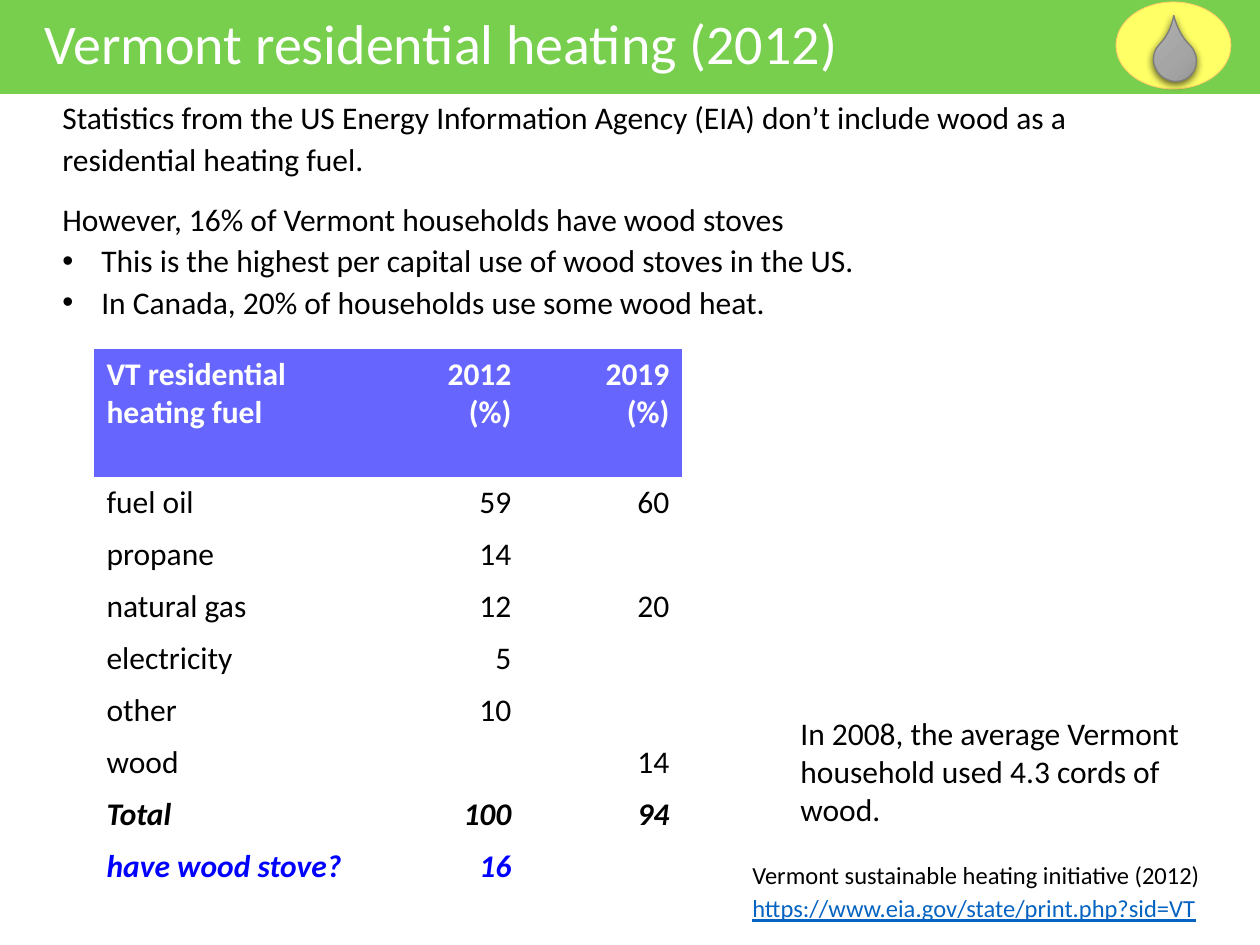
from copy import deepcopy

from lxml import etree
from pptx import Presentation
from pptx.dml.color import RGBColor
from pptx.enum.shapes import MSO_SHAPE
from pptx.enum.text import MSO_AUTO_SIZE, PP_ALIGN
from pptx.oxml import parse_xml
from pptx.oxml.ns import qn
from pptx.util import Emu, Pt

RECT, OVAL, TEAR = MSO_SHAPE.RECTANGLE, MSO_SHAPE.OVAL, MSO_SHAPE.TEAR
GROW, RIGHT = MSO_AUTO_SIZE.SHAPE_TO_FIT_TEXT, PP_ALIGN.RIGHT
PX = 914400 // 126
FONT = "Calibri"
BLACK, WHITE, BLUE = "000000", "FFFFFF", "0000FF"
PLAIN = "{2D5ABB26-0587-4C30-8999-92F81FD0307C}"  # no style, no grid

# Content: box, size, colour, line spacing, paragraphs ("•" marks a bullet)
TEXTS = [
    ((32, 2, 948, 81), 32, WHITE, None, ["Vermont residential heating (2012)"]),
    ((50, 88, 1150, 96), 18, BLACK, 1.1, [
        "Statistics from the US Energy Information Agency (EIA) don’t include "
        "wood as a residential heating fuel."]),
    ((50, 190, 1150, 139), 18, BLACK, 1.1, [
        "However, 16% of Vermont households have wood stoves",
        "•This is the highest per capital use of wood stoves in the US.",
        "•In Canada, 20% of households use some wood heat."]),
    ((788, 708, 461, 127), 18, BLACK, None, [
        "In 2008, the average Vermont household used 4.3 cords of wood."]),
    ((740, 854, 479, 43), 14, BLACK, None, [
        "Vermont sustainable heating initiative (2012)"]),
    ((740, 887, 479, 43), 14, "0563C1", None, [
        "https://www.eia.gov/state/print.php?sid=VT"]),
]
ROWS = [
    ("VT residential heating fuel", "2012\n(%)", "2019\n(%)"),
    ("fuel oil", "59", "60"),
    ("propane", "14", ""),
    ("natural gas", "12", "20"),
    ("electricity", "5", ""),
    ("other", "10", ""),
    ("wood", "", "14"),
    ("Total", "100", "94"),
    ("have wood stove?", "16", ""),
]
COLS = [272, 158, 158]
TALL = [128] + [52] * 7 + [89]
# Row looks: colour, bold, italic
LOOKS = {0: (WHITE, True, False), 7: (BLACK, True, True), 8: (BLUE, True, True)}


def rgb(code):
    return RGBColor.from_string(code)


def scale(box):
    return [Emu(n * PX) for n in box]


def style(para, size, color, bold=False, slant=False):
    for run in para.runs:
        font = run.font
        font.name, font.size = FONT, Pt(size)
        font.bold, font.italic = bold, slant
        font.color.rgb = rgb(color)


def bullet(para):
    props = para._p.get_or_add_pPr()
    props.set("marL", str(39 * PX))
    props.set("indent", str(-39 * PX))
    etree.SubElement(props, qn("a:buFont")).set("typeface", "Arial")
    etree.SubElement(props, qn("a:buChar")).set("char", "•")


def add_text(box, size, color, gap, lines):
    frame = slide.shapes.add_textbox(*scale(box)).text_frame
    frame.word_wrap, frame.auto_size = True, GROW
    frame.text = "\n".join(line.lstrip("•") for line in lines)
    for para, line in zip(frame.paragraphs, lines):
        if gap:
            para.line_spacing = gap
        if line.startswith("•"):
            bullet(para)
        style(para, size, color)
        para.runs[0].font.underline = line.startswith("https") or None


def add_shape(home, kind, box, fill=None, line=None, width=0):
    shape = home.add_shape(kind, *scale(box))
    shape.shadow.inherit = False
    if fill:
        shape.fill.solid()
        shape.fill.fore_color.rgb = rgb(fill)
    if line:
        shape.line.color.rgb = rgb(line)
        shape.line.width = Pt(width)
    else:
        shape.line.fill.background()
    return shape


def shade(shape, colors):
    """Even vertical gradient of three colours."""
    shape.fill.gradient()
    shape.fill.gradient_angle = 270
    first = shape.fill._fill._gradFill.find(qn("a:gsLst"))[0]
    first.addnext(deepcopy(first))
    for i, (stop, code) in enumerate(zip(shape.fill.gradient_stops, colors)):
        stop.color.rgb = rgb(code)
        stop.position = i / 2


def drop_shadow(shape):
    effects = shape._element.spPr.find(qn("a:effectLst"))
    effects.append(parse_xml(
        '<a:outerShdw xmlns:a="http://schemas.openxmlformats.org/drawingml/2006/main" '
        f'blurRad="{Pt(4.5)}" dist="{Pt(1.5)}" dir="5400000" algn="ctr" rotWithShape="0">'
        '<a:srgbClr val="000000"><a:alpha val="63000"/></a:srgbClr></a:outerShdw>'))


deck = Presentation()
deck.slide_width, deck.slide_height = scale((1260, 945))
slide = deck.slides.add_slide(deck.slide_layouts[6])

# Title band
add_shape(slide.shapes, RECT, (0, 0, 1261, 94), "78CE4D")

# Oil drop badge
badge = slide.shapes.add_group_shape().shapes
add_shape(badge, OVAL, (1116, 2, 115, 87), "FFFF66", "FFCC66", 0.5)
drop = add_shape(badge, TEAR, (1154, 38, 42, 44), None, "7C7C7C", 0.75)
drop.adjustments[0] = 1.465
drop.rotation = 314.8
shade(drop, ["AFAFAF", "A5A5A5", "939393"])
drop_shadow(drop)

# Texts
for item in TEXTS:
    add_text(*item)

# Fuel table
table = slide.shapes.add_table(
    len(ROWS), len(COLS), *scale((94, 349, sum(COLS), sum(TALL)))).table
table._tbl.tblPr.find(qn("a:tableStyleId")).text = PLAIN
table.horz_banding = False
for col, wide in zip(table.columns, COLS):
    col.width = Emu(wide * PX)
for r, row in enumerate(ROWS):
    table.rows[r].height = Emu(TALL[r] * PX)
    for c, text in enumerate(row):
        cell = table.cell(r, c)
        cell.text_frame.text = text
        if r == 0:
            cell.fill.solid()
            cell.fill.fore_color.rgb = rgb("6666FF")
        else:
            cell.fill.background()
        for para in cell.text_frame.paragraphs:
            if c:
                para.alignment = RIGHT
            style(para, 18, *LOOKS.get(r, (BLACK, False, False)))

deck.save("out.pptx")
